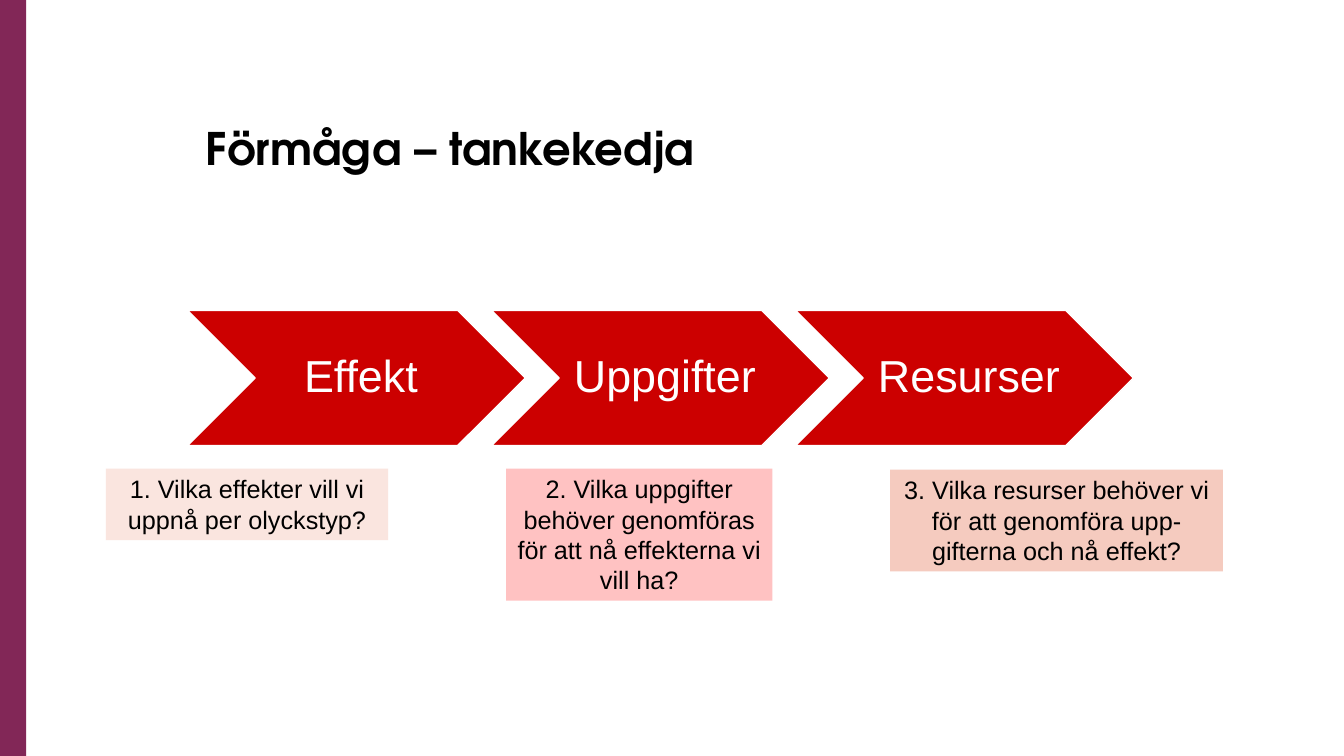
import pptx
import pptx.util
import pptx.dml.color
import pptx.enum.shapes
import pptx.enum.text

Inches = pptx.util.Inches
Pt = pptx.util.Pt
RGBColor = pptx.dml.color.RGBColor
MSO_SHAPE = pptx.enum.shapes.MSO_SHAPE
MSO_ANCHOR = pptx.enum.text.MSO_ANCHOR
PP_ALIGN = pptx.enum.text.PP_ALIGN

PLUM = RGBColor(0x82, 0x27, 0x57)
RED = RGBColor(0xCC, 0x00, 0x00)
WHITE = RGBColor(0xFF, 0xFF, 0xFF)
BLACK = RGBColor(0x00, 0x00, 0x00)
PEACH = RGBColor(0xFA, 0xE5, 0xDF)
PINK = RGBColor(0xFF, 0xC2, 0xC2)
SALMON = RGBColor(0xF5, 0xCB, 0xBF)

STEPS = ["Effekt", "Uppgifter", "Resurser"]
QUESTIONS = [
    ("1. Vilka effekter vill vi uppnå per olyckstyp?",
     (1.05, 4.65, 2.8, 0.71), PEACH),
    ("2. Vilka uppgifter behöver genomföras för att nå effekterna vi vill ha?",
     (5.02, 4.65, 2.64, 1.31), PINK),
    ("3. Vilka resurser behöver vi för att genomföra upp-gifterna och nå effekt?",
     (8.83, 4.66, 3.3, 1.01), SALMON),
]


def add_filled_shape(slide, preset, box, fill):
    shape = slide.shapes.add_shape(preset, *(Inches(length) for length in box))
    shape.shadow.inherit = False
    shape.fill.solid()
    shape.fill.fore_color.rgb = fill
    shape.line.fill.background()
    return shape


def write(paragraph, text, size, color, font="Arial", bold=False):
    run = paragraph.add_run()
    run.text = text
    run.font.name = font
    run.font.size = Pt(size)
    run.font.bold = bold
    run.font.color.rgb = color


def add_title(slide, box, text):
    title = slide.shapes.title
    title.left, title.top, title.width, title.height = (
        Inches(length) for length in box)
    frame = title.text_frame
    frame.word_wrap = True
    frame.vertical_anchor = MSO_ANCHOR.TOP
    heading = frame.paragraphs[0]
    heading.alignment = PP_ALIGN.LEFT
    heading.line_spacing = 0.9
    write(heading, text, 32, BLACK, "TeX Gyre Adventor", True)


def add_chain(slide, box, steps):
    """Fill the box with chevrons, each overlapping the next by a tenth."""
    left, top, width, height = box
    step_width = width / (1 + 0.9 * (len(steps) - 1))
    for index, step in enumerate(steps):
        chevron = add_filled_shape(
            slide, MSO_SHAPE.CHEVRON,
            (left + index * 0.9 * step_width, top, step_width, height), RED)
        chevron.line.color.rgb = WHITE
        chevron.line.width = Pt(1)
        frame = chevron.text_frame
        frame.word_wrap = False
        frame.vertical_anchor = MSO_ANCHOR.MIDDLE
        frame.margin_left = Inches(0.14)
        frame.margin_right = frame.margin_top = frame.margin_bottom = Inches(0.05)
        label = frame.paragraphs[0]
        label.alignment = PP_ALIGN.CENTER
        label.line_spacing = 0.9
        write(label, step, 32, WHITE)


def add_question(slide, box, text, fill):
    frame = add_filled_shape(slide, MSO_SHAPE.RECTANGLE, box, fill).text_frame
    frame.word_wrap = True
    frame.vertical_anchor = MSO_ANCHOR.TOP
    question = frame.paragraphs[0]
    question.alignment = PP_ALIGN.CENTER
    write(question, text, 18, BLACK)


def main():
    deck = pptx.Presentation()
    deck.slide_width, deck.slide_height = Inches(13.33), Inches(7.5)
    slide = deck.slides.add_slide(deck.slide_layouts[5])
    add_filled_shape(slide, MSO_SHAPE.RECTANGLE, (0, 0, 0.26, 7.5), PLUM)
    add_title(slide, (1.94, 1.21, 9.38, 1.06), "Förmåga – tankekedja")
    add_chain(slide, (1.86, 3.08, 9.38, 1.34), STEPS)
    for text, box, fill in QUESTIONS:
        add_question(slide, box, text, fill)
    deck.save("out.pptx")


if __name__ == "__main__":
    main()
